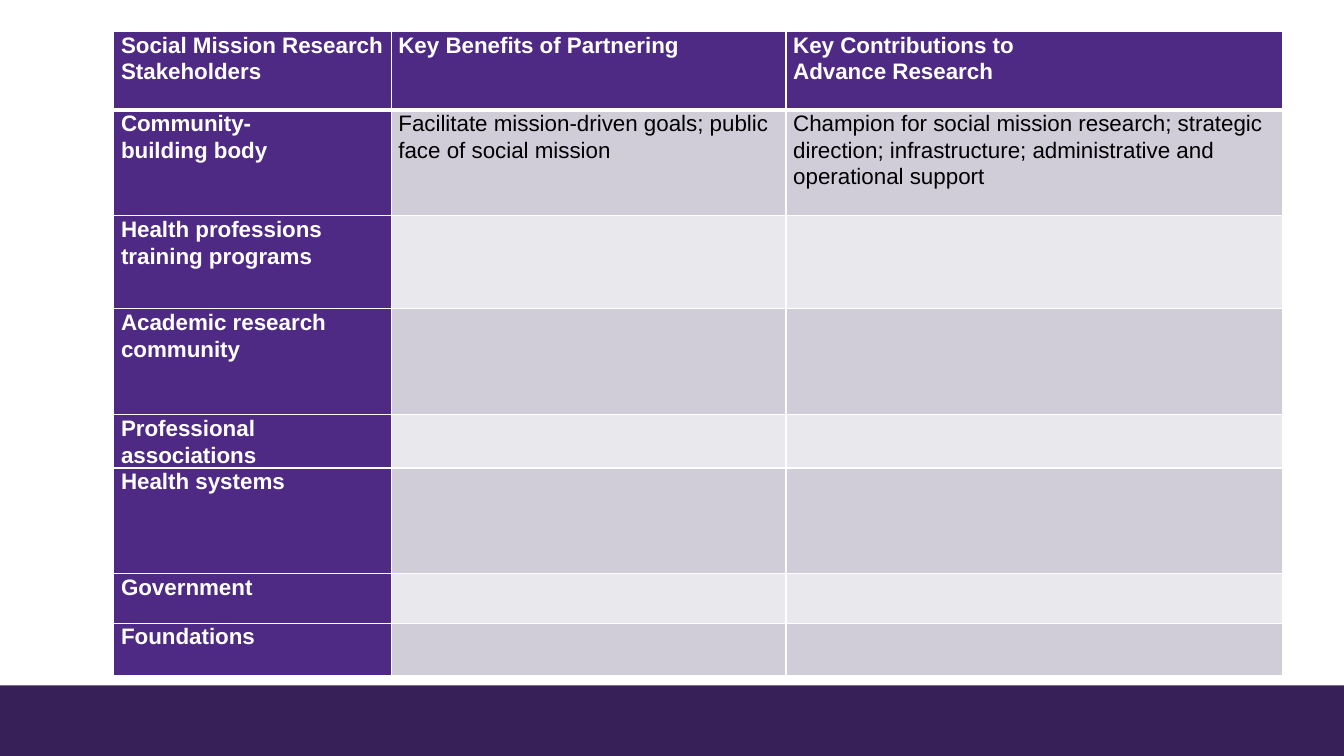
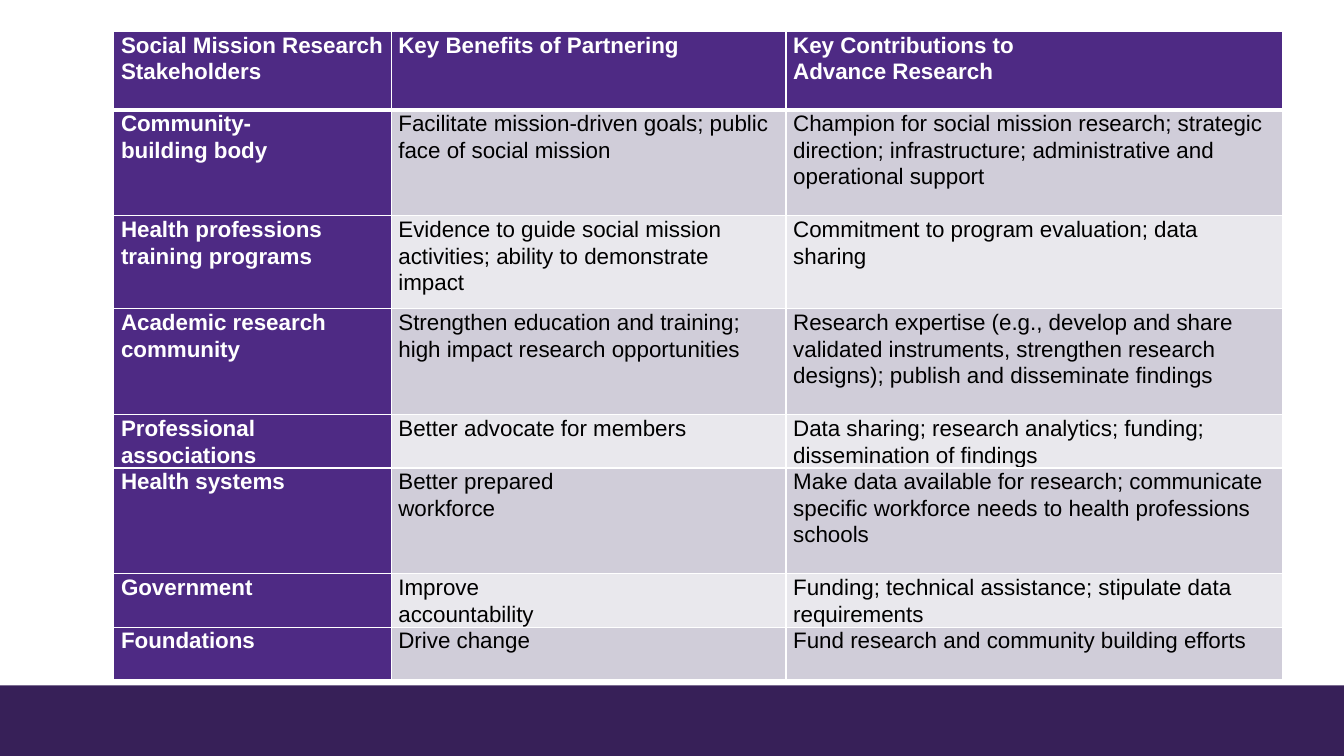
from lxml import etree
from pptx import Presentation
from pptx import util as u
from pptx.dml.color import RGBColor
from pptx.enum import shapes
from pptx.oxml import ns

WHITE = RGBColor(0xFF, 0xFF, 0xFF)
BLACK = RGBColor(0x00, 0x00, 0x00)
PURPLE = RGBColor(0x4E, 0x2A, 0x84)
DARK_PURPLE = RGBColor(0x37, 0x20, 0x58)
BAND_FILLS = (RGBColor(0xE9, 0xE8, 0xED), RGBColor(0xD0, 0xCD, 0xD9))

FONT = "Arial"
COLUMN_WIDTHS = (6.99, 9.95, 12.51)
ROW_HEIGHTS = (1.98, 2.67, 2.34, 2.67, 1.32, 2.67, 1.24, 1.32)

# Heading row, then one row per stakeholder
ROWS = [
    ("Social Mission Research Stakeholders",
     "Key Benefits of Partnering",
     "Key Contributions to\nAdvance Research"),
    ("Community-\nbuilding body",
     "Facilitate mission-driven goals; public face of social mission",
     "Champion for social mission research; strategic direction; "
     "infrastructure; administrative and operational support"),
    ("Health professions training programs",
     "Evidence to guide social mission activities; ability to demonstrate impact",
     "Commitment to program evaluation; data sharing"),
    ("Academic research\ncommunity",
     "Strengthen education and training; high impact research opportunities",
     "Research expertise (e.g., develop and share validated instruments, "
     "strengthen research designs); publish and disseminate findings"),
    ("Professional associations",
     "Better advocate for members",
     "Data sharing; research analytics; funding; dissemination of findings"),
    ("Health systems",
     "Better prepared\nworkforce",
     "Make data available for research; communicate specific workforce "
     "needs to health professions schools"),
    ("Government",
     "Improve\naccountability",
     "Funding; technical assistance; stipulate data requirements"),
    ("Foundations",
     "Drive change",
     "Fund research and community building efforts"),
]


def add_borders(cell, bottom_width):
    """White rules on all four sides of a cell."""
    properties = cell._tc.get_or_add_tcPr()
    for side, width in (("L", 1), ("R", 1), ("T", 1), ("B", bottom_width)):
        line = etree.SubElement(properties, ns.qn(f"a:ln{side}"), w=str(u.Pt(width)))
        fill = etree.SubElement(line, ns.qn("a:solidFill"))
        etree.SubElement(fill, ns.qn("a:srgbClr"), val=str(WHITE))


def write_cell(cell, content, color, bold):
    """One paragraph, with a line break wherever the content has one."""
    cell.margin_left = cell.margin_right = u.Cm(0.18)
    cell.margin_top = cell.margin_bottom = 0
    paragraph = cell.text_frame.paragraphs[0]
    paragraph.line_spacing = 1.07
    for index, line in enumerate(content.split("\n")):
        if index:
            paragraph.add_line_break()
        run = paragraph.add_run()
        run.text = line
        run.font.name = FONT
        run.font.size = u.Pt(16)
        run.font.bold = bold
        run.font.color.rgb = color


presentation = Presentation()
presentation.slide_width = u.Cm(33.87)
presentation.slide_height = u.Cm(19.05)

# The first slide fills in one stakeholder, the second all of them
for answered_rows in (1, len(ROWS) - 1):
    slide = presentation.slides.add_slide(presentation.slide_layouts[6])

    # Footer band
    band = slide.shapes.add_shape(
        shapes.MSO_SHAPE.RECTANGLE, 0, u.Cm(17.27),
        presentation.slide_width, u.Cm(1.78))
    band.shadow.inherit = False
    band.fill.solid()
    band.fill.fore_color.rgb = DARK_PURPLE
    band.line.fill.background()

    # Stakeholder table
    table = slide.shapes.add_table(
        len(ROWS), len(COLUMN_WIDTHS), u.Cm(2.87), u.Cm(0.79),
        u.Cm(sum(COLUMN_WIDTHS)), u.Cm(sum(ROW_HEIGHTS))).table
    table.first_col = True
    for column, width in zip(table.columns, COLUMN_WIDTHS):
        column.width = u.Cm(width)
    for row, height in zip(table.rows, ROW_HEIGHTS):
        row.height = u.Cm(height)

    for row_index, contents in enumerate(ROWS):
        for column_index, content in enumerate(contents):
            cell = table.cell(row_index, column_index)
            is_heading = row_index == 0 or column_index == 0
            add_borders(cell, 3 if row_index == 0 else 1)
            cell.fill.solid()
            cell.fill.fore_color.rgb = PURPLE if is_heading else BAND_FILLS[row_index % 2]
            if is_heading or row_index <= answered_rows:
                write_cell(cell, content, WHITE if is_heading else BLACK, is_heading)

presentation.save("out.pptx")
